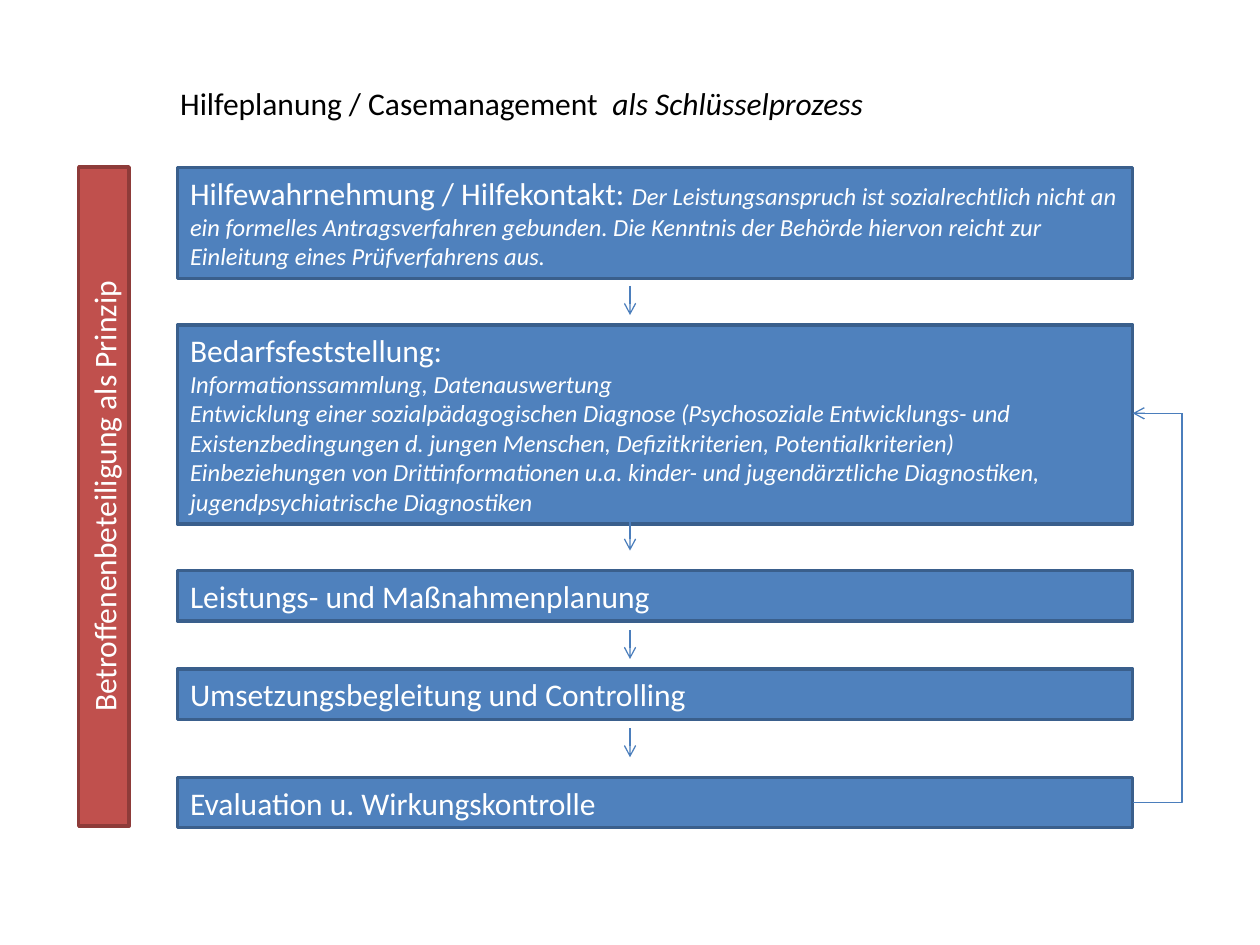
import pptx
import pptx.util
import pptx.dml.color
import pptx.enum.shapes
import pptx.enum.text
import pptx.oxml
import pptx.oxml.ns

Inches = pptx.util.Inches
Align = pptx.enum.text.PP_ALIGN
Connector = pptx.enum.shapes.MSO_CONNECTOR

THEME = dict(font="Calibri", heading=18, detail=14, text="FFFFFF", title="000000",
             step=("4F81BD", "3A5F8C"), principle=("C0504D", "8E3B39"),
             arrow="4B7EBC", border=2, arrow_width=0.75)

# Content: paragraphs are lists of (text, style) runs
HEADING, DETAIL, EMPHASIS = ("heading", False), ("detail", True), ("heading", True)
TITLE = [[("Hilfeplanung / Casemanagement  ", HEADING), ("als Schlüsselprozess", EMPHASIS)]]
PRINCIPLE = [[("Betroffenenbeteiligung als Prinzip", HEADING)]]
STEPS = [  # top, height, paragraphs
    (1.33, 0.88, [[
        ("Hilfewahrnehmung / Hilfekontakt: ", HEADING),
        ("Der Leistungsanspruch ist sozialrechtlich nicht an ein formelles Antragsverfahren "
         "gebunden. Die Kenntnis der Behörde hiervon reicht zur Einleitung eines "
         "Prüfverfahrens aus.", DETAIL)]]),
    (2.58, 1.58, [
        [("Bedarfsfeststellung:", HEADING)],
        [("Informationssammlung, Datenauswertung", DETAIL)],
        [("Entwicklung einer sozialpädagogischen Diagnose (Psychosoziale Entwicklungs- und "
          "Existenzbedingungen d. jungen Menschen, Defizitkriterien, Potentialkriterien)", DETAIL)],
        [("Einbeziehungen von Drittinformationen u.a. kinder- und jugendärztliche "
          "Diagnostiken, jugendpsychiatrische Diagnostiken", DETAIL)]]),
    (4.53, 0.4, [[("Leistungs- und Maßnahmenplanung", HEADING)]]),
    (5.31, 0.4, [[("Umsetzungsbegleitung und Controlling", HEADING)]]),
    (6.17, 0.4, [[("Evaluation u. Wirkungskontrolle", HEADING)]]),
]

# Layout
STEP_LEFT, STEP_WIDTH = 1.41, 7.58
STEP_RIGHT = STEP_LEFT + STEP_WIDTH
ARROW_X, ARROW_LENGTH = 5, 0.23
ARROW_TOPS = [2.27, 4.14, 5, 5.78]
FEEDBACK_X, FEEDBACK_TOP = 9.38, 3.28


def rgb(value):
    return pptx.dml.color.RGBColor.from_string(value)


def write(shape, paragraphs, color=THEME["text"], align=Align.LEFT):
    frame = shape.text_frame
    frame.word_wrap = True
    frame.auto_size = pptx.enum.text.MSO_AUTO_SIZE.SHAPE_TO_FIT_TEXT
    frame.vertical_anchor = pptx.enum.text.MSO_ANCHOR.TOP
    for index, runs in enumerate(paragraphs):
        paragraph = frame.add_paragraph() if index else frame.paragraphs[0]
        paragraph.alignment = align
        for text, (size, italic) in runs:
            run = paragraph.add_run()
            run.text = text
            run.font.name = THEME["font"]
            run.font.size = pptx.util.Pt(THEME[size])
            run.font.italic = italic
            run.font.color.rgb = rgb(color)


def add_box(slide, left, top, width, height, paragraphs, colors, align=Align.LEFT):
    box = slide.shapes.add_shape(pptx.enum.shapes.MSO_SHAPE.RECTANGLE,
                                 *map(Inches, (left, top, width, height)))
    fill, border = colors
    box.shadow.inherit = False
    box.fill.solid()
    box.fill.fore_color.rgb = rgb(fill)
    box.line.color.rgb = rgb(border)
    box.line.width = pptx.util.Pt(THEME["border"])
    write(box, paragraphs, align=align)
    return box


def add_line(slide, start, end, kind=Connector.STRAIGHT, head=True):
    line = slide.shapes.add_connector(kind, *map(Inches, (*start, *end)))
    line.line.color.rgb = rgb(THEME["arrow"])
    line.line.width = pptx.util.Pt(THEME["arrow_width"])
    properties = line._element.spPr
    if head:
        tail = pptx.oxml.parse_xml(f'<a:tailEnd {pptx.oxml.ns.nsdecls("a")} type="arrow"/>')
        line.line._get_or_add_ln().append(tail)
    properties.append(pptx.oxml.parse_xml(f'<a:effectLst {pptx.oxml.ns.nsdecls("a")}/>'))
    return line


def main():
    deck = pptx.Presentation()
    deck.slide_width, deck.slide_height = Inches(10), Inches(7.5)
    slide = deck.slides.add_slide(deck.slide_layouts[5])

    # Title
    title = slide.shapes.title
    title.left, title.top, title.width, title.height = map(Inches, (1.33, 0.62, 7.5, 0.4))
    write(title, TITLE, color=THEME["title"])

    # Process steps
    for top, height, paragraphs in STEPS:
        add_box(slide, STEP_LEFT, top, STEP_WIDTH, height, paragraphs, THEME["step"])

    # Principle bar, turned to read upwards beside the steps
    principle = add_box(slide, -1.79, 3.74, 5.23, 0.4, PRINCIPLE, THEME["principle"], Align.CENTER)
    principle.rotation = 270

    # Arrows from step to step
    for top in ARROW_TOPS:
        add_line(slide, (ARROW_X, top), (ARROW_X, top + ARROW_LENGTH))

    # Feedback from the last step to the second, with a single corner
    last_top, last_height, _ = STEPS[-1]
    corner = add_line(slide, (STEP_RIGHT, last_top + last_height / 2),
                      (FEEDBACK_X, FEEDBACK_TOP), Connector.ELBOW, head=False)
    corner._element.spPr.find(pptx.oxml.ns.qn("a:prstGeom")).set("prst", "bentConnector2")
    add_line(slide, (FEEDBACK_X, FEEDBACK_TOP), (STEP_RIGHT, FEEDBACK_TOP))

    deck.save("out.pptx")


if __name__ == "__main__":
    main()
